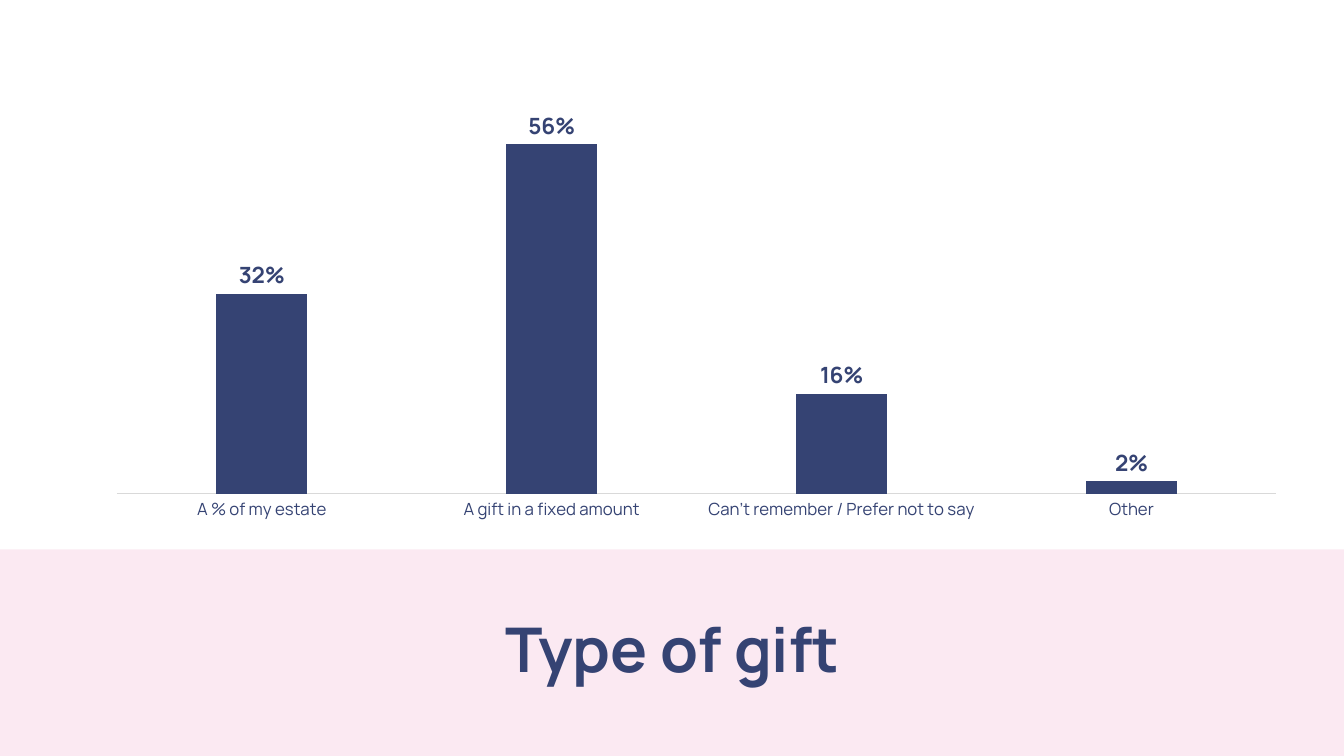
from dataclasses import dataclass

import pptx
import pptx.chart.data
import pptx.dml.color
import pptx.enum.chart
import pptx.enum.shapes
import pptx.enum.text
import pptx.oxml
import pptx.oxml.ns
import pptx.util
from pptx.util import Inches

COLORS = {"navy": "354373", "pink": "F7CADF", "axis": "D9D9D9"}
FONT = "Manrope"
PERCENT = "#,##0%"
PAGE_WIDTH, PAGE_HEIGHT = 13.33, 7.5
BAND_TOP = 5.45


@dataclass(frozen=True)
class Answer:
    label: str
    share: float


ANSWERS = [
    Answer("A % of my estate", 0.32),
    Answer("A gift in a fixed amount", 0.56),
    Answer("Can't remember / Prefer not to say", 0.16),
    Answer("Other", 0.02),
]


def color(name: str) -> pptx.dml.color.RGBColor:
    return pptx.dml.color.RGBColor.from_string(COLORS[name])


def style_font(font, size: float, bold: bool = False) -> None:
    font.name = FONT
    font.size = pptx.util.Pt(size)
    font.bold = bold
    font.color.rgb = color("navy")


def add_band(page) -> None:
    band = page.shapes.add_shape(
        pptx.enum.shapes.MSO_SHAPE.RECTANGLE,
        Inches(0), Inches(BAND_TOP),
        Inches(PAGE_WIDTH), Inches(PAGE_HEIGHT - BAND_TOP),
    )
    band.shadow.inherit = False
    band.line.fill.background()
    band.fill.solid()
    band.fill.fore_color.rgb = color("pink")
    tint = band.element.spPr.find(".//" + pptx.oxml.ns.qn("a:srgbClr"))
    tint.append(pptx.oxml.parse_xml(
        f'<a:alpha {pptx.oxml.ns.nsdecls("a")} val="40000"/>'
    ))


def add_gift_chart(page, answers: list[Answer]) -> None:
    data = pptx.chart.data.CategoryChartData(number_format="0%")
    data.categories = [answer.label for answer in answers]
    data.add_series("Series 1", [answer.share for answer in answers])
    chart = page.shapes.add_chart(
        pptx.enum.chart.XL_CHART_TYPE.COLUMN_CLUSTERED,
        Inches(0.92), Inches(1.1), Inches(11.98), Inches(4.15), data,
    ).chart
    chart.has_title = False
    chart.has_legend = False
    style_font(chart.font, 10)

    plot = chart.plots[0]
    plot.vary_by_categories = False
    plot.gap_width = 219
    plot.overlap = -27
    bars = plot.series[0]
    bars.format.fill.solid()
    bars.format.fill.fore_color.rgb = color("navy")

    labels = bars.data_labels
    labels.show_value = True
    labels.position = pptx.enum.chart.XL_LABEL_POSITION.OUTSIDE_END
    labels.number_format = PERCENT
    labels.number_format_is_linked = False
    style_font(labels.font, 16, bold=True)

    categories = chart.category_axis
    categories.major_tick_mark = pptx.enum.chart.XL_TICK_MARK.NONE
    categories.has_major_gridlines = False
    categories.format.line.color.rgb = color("axis")
    categories.format.line.width = pptx.util.Pt(0.75)
    style_font(categories.tick_labels.font, 12)

    values = chart.value_axis
    values.minimum_scale = 0
    values.maximum_scale = 0.6
    values.has_major_gridlines = False
    values.tick_labels.number_format = PERCENT
    values.tick_labels.number_format_is_linked = False
    values.visible = False


def add_title(page, text: str) -> None:
    title = page.shapes.title
    title.left, title.top = Inches(0.92), Inches(5.68)
    title.width, title.height = Inches(11.5), Inches(1.59)
    frame = title.text_frame
    frame.word_wrap = True
    frame.auto_size = pptx.enum.text.MSO_AUTO_SIZE.NONE
    frame.vertical_anchor = pptx.enum.text.MSO_ANCHOR.MIDDLE
    para = frame.paragraphs[0]
    para.alignment = pptx.enum.text.PP_ALIGN.CENTER
    para.line_spacing = 0.9
    span = para.add_run()
    span.text = text
    style_font(span.font, 44, bold=True)
    title.element.getparent().append(title.element)


def main() -> None:
    deck = pptx.Presentation()
    deck.slide_width = Inches(PAGE_WIDTH)
    deck.slide_height = Inches(PAGE_HEIGHT)
    page = deck.slides.add_slide(deck.slide_layouts[5])
    add_band(page)
    add_gift_chart(page, ANSWERS)
    add_title(page, "Type of gift")
    deck.save("out.pptx")


if __name__ == "__main__":
    main()
